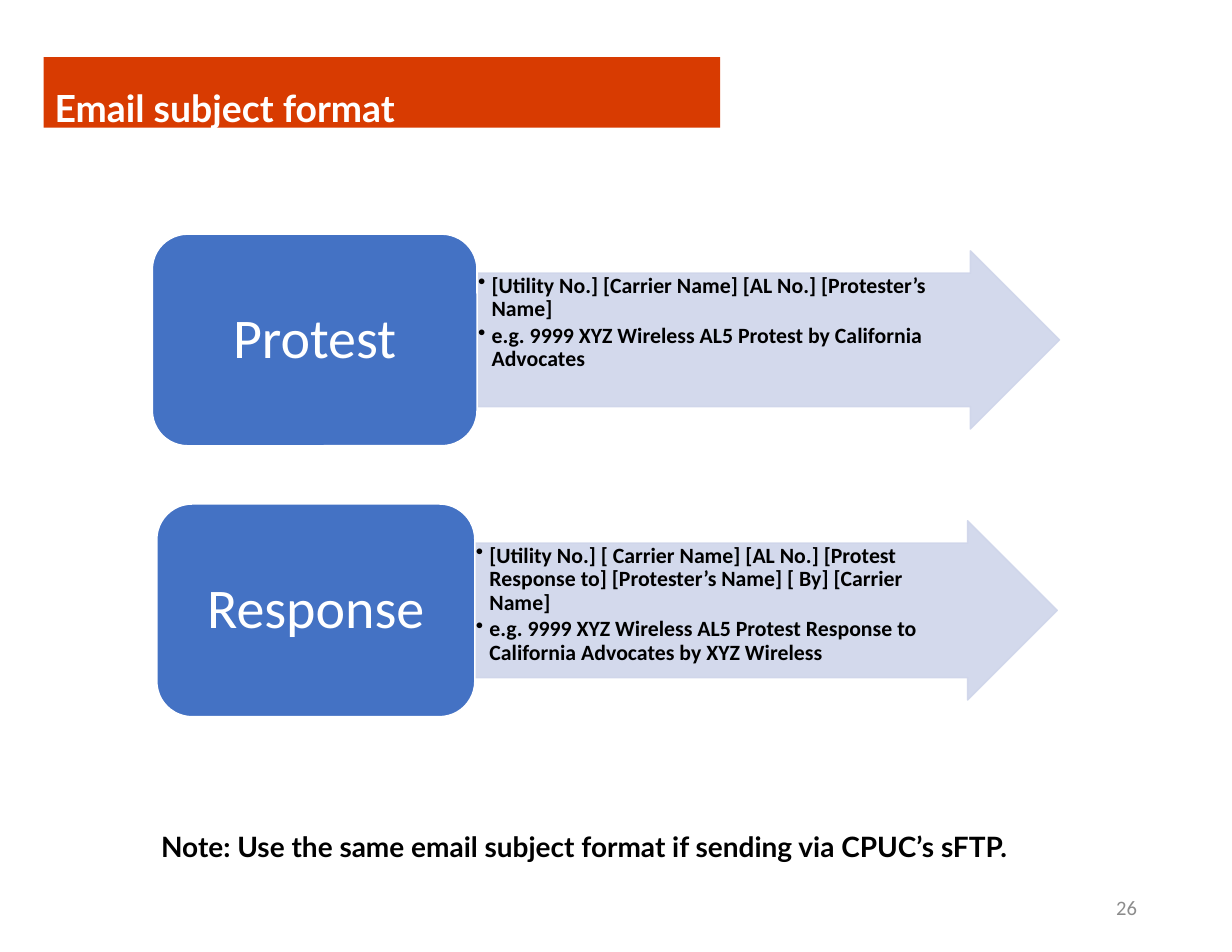
import pptx
import pptx.util
import pptx.dml.color
import pptx.enum.shapes
import pptx.enum.text
import pptx.oxml.ns
import lxml.etree

Inches = pptx.util.Inches
Pt = pptx.util.Pt
SHAPES = pptx.enum.shapes.MSO_SHAPE
ALIGN = pptx.enum.text.PP_ALIGN
ANCHOR = pptx.enum.text.MSO_ANCHOR

COLORS = {
    "banner": "D83B01",
    "box": "4472C4",
    "arrow": "CFD5EA",
    "white": "FFFFFF",
    "black": "000000",
    "page number": "8C8C8C",
}
TITLE = "Email subject format"
NOTE = "Note: Use the same email subject format if sending via CPUC’s sFTP."
PAGE_NUMBER = "26"
ROWS = [
    {
        "label": "Protest",
        "box": (1.36, 2.09, 2.9, 1.89),
        "bullets": [
            "[Utility No.] [Carrier Name] [AL No.] [Protester’s Name]",
            "e.g. 9999 XYZ Wireless AL5 Protest by California Advocates",
        ],
    },
    {
        "label": "Response",
        "box": (1.4, 4.5, 2.84, 1.9),
        "bullets": [
            "[Utility No.] [ Carrier Name] [AL No.] [Protest Response to] "
            "[Protester’s Name] [ By] [Carrier Name]",
            "e.g. 9999 XYZ Wireless AL5 Protest Response to California Advocates by XYZ Wireless",
        ],
    },
]
ARROW_WIDTH = 5.2
ARROW_INSET = 0.15  # arrow top and bottom, measured from the box
ARROW_OPACITY = 90


def rgb(name):
    return pptx.dml.color.RGBColor.from_string(COLORS[name])


def set_opacity(fill_parent, percent):
    for color in fill_parent.iter(pptx.oxml.ns.qn("a:srgbClr")):
        alpha = lxml.etree.SubElement(color, pptx.oxml.ns.qn("a:alpha"))
        alpha.set("val", str(percent * 1000))


def add_bullet(paragraph, indent):
    properties = paragraph._p.get_or_add_pPr()
    properties.set("marL", str(Inches(indent)))
    properties.set("indent", str(-Inches(indent)))
    bullet = lxml.etree.SubElement(properties, pptx.oxml.ns.qn("a:buChar"))
    bullet.set("char", "•")


def add_shape(slide, kind, place, fill, line=None):
    shape = slide.shapes.add_shape(kind, *map(Inches, place))
    shape.shadow.inherit = False
    shape.fill.solid()
    shape.fill.fore_color.rgb = rgb(fill)
    if line:
        shape.line.color.rgb = rgb(line)
        shape.line.width = Pt(1)
    else:
        shape.line.fill.background()
    return shape


def write(shape, lines, size, font, color, bold=False, align=ALIGN.LEFT, anchor=ANCHOR.TOP,
          spacing=None, after=None, insets=(0.1, 0.05, 0.1, 0.05)):
    """Fill the shape with one paragraph per line; insets are left, top, right, bottom."""
    frame = shape.text_frame
    frame.word_wrap = True
    frame.vertical_anchor = anchor
    (frame.margin_left, frame.margin_top,
     frame.margin_right, frame.margin_bottom) = map(Inches, insets)
    for index, line in enumerate(lines):
        paragraph = frame.add_paragraph() if index else frame.paragraphs[0]
        paragraph.alignment = align
        if spacing:
            paragraph.line_spacing = spacing
        if after:
            paragraph.space_after = Pt(after)
        run = paragraph.add_run()
        run.text = line
        run.font.size = Pt(size)
        run.font.name = font
        run.font.bold = bold
        run.font.color.rgb = rgb(color)


def add_row(slide, row):
    left, top, width, height = row["box"]
    arrow_place = (left + width, top + ARROW_INSET, ARROW_WIDTH, height - 2 * ARROW_INSET)
    arrow = add_shape(slide, SHAPES.RIGHT_ARROW, arrow_place, "arrow", "arrow")
    arrow.adjustments[0] = 0.75
    arrow.adjustments[1] = 0.5
    set_opacity(arrow._element.spPr, ARROW_OPACITY)
    write(arrow, row["bullets"], 14, "Calibri", "black", bold=True,
          spacing=0.9, after=2, insets=(0.01, 0.01, 0.4, 0.01))
    for paragraph in arrow.text_frame.paragraphs:
        add_bullet(paragraph, 0.12)

    box = add_shape(slide, SHAPES.ROUNDED_RECTANGLE, row["box"], "box", "white")
    write(box, [row["label"]], 36, "Calibri", "white", align=ALIGN.CENTER,
          anchor=ANCHOR.MIDDLE, spacing=0.9, insets=(0.15, 0.07, 0.15, 0.07))


def main():
    presentation = pptx.Presentation()
    presentation.slide_width = Inches(11)
    presentation.slide_height = Inches(8.5)
    slide = presentation.slides.add_slide(presentation.slide_layouts[6])

    note = slide.shapes.add_textbox(*map(Inches, (1.34, 7.36, 9.52, 0.4)))
    write(note, [NOTE], 18, "Lato", "black", bold=True)

    banner = add_shape(slide, SHAPES.RECTANGLE, (0.39, 0.51, 6.04, 0.63), "banner")
    write(banner, [TITLE], 24, "Lato", "white", bold=True, spacing=1.5)

    for row in ROWS:
        add_row(slide, row)

    number = slide.shapes.add_textbox(*map(Inches, (7.77, 7.88, 2.48, 0.45)))
    write(number, [PAGE_NUMBER], 13.2, "Calibri", "page number",
          align=ALIGN.RIGHT, anchor=ANCHOR.MIDDLE)

    presentation.save("out.pptx")


if __name__ == "__main__":
    main()
